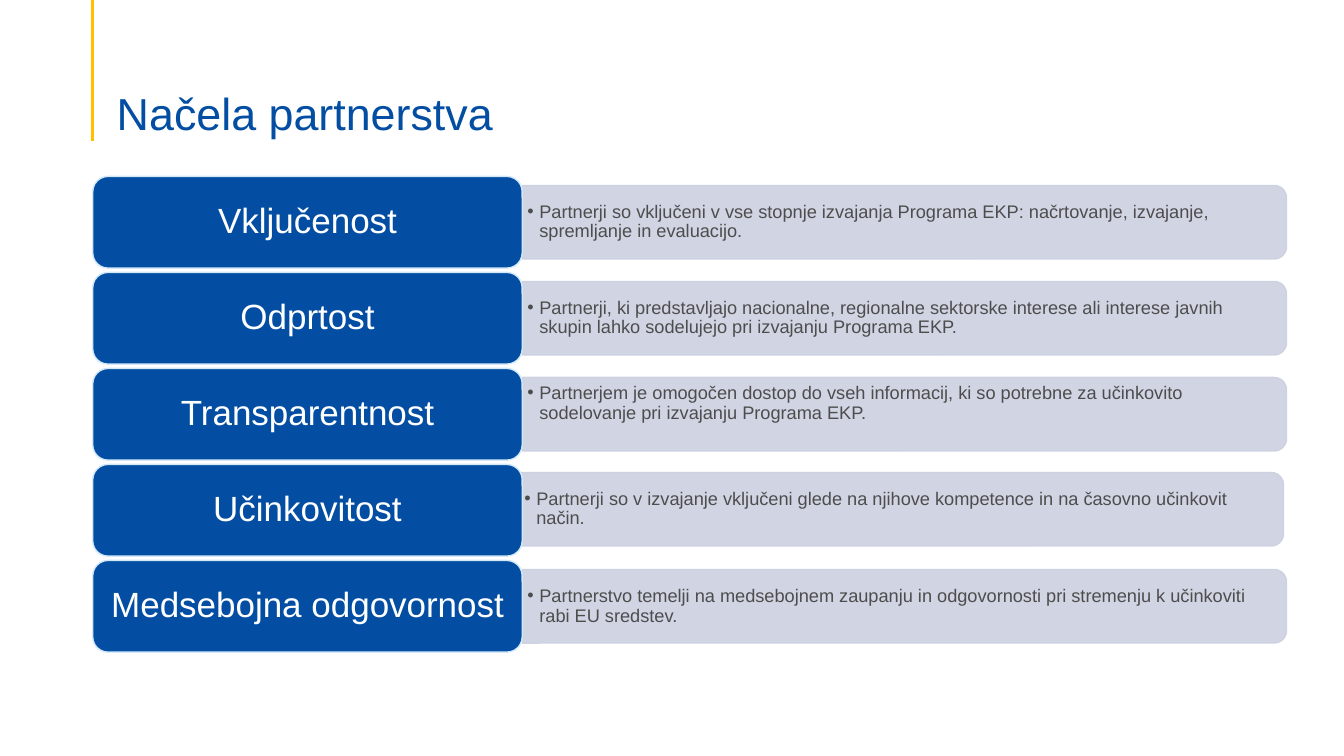
from dataclasses import dataclass

from lxml import etree
from pptx import Presentation
from pptx import util as u
from pptx.dml.color import RGBColor
from pptx.enum import shapes, text
from pptx.oxml.ns import qn

PX = 9144


@dataclass(frozen=True)
class Theme:
    """Colours, font and type sizes of the deck."""
    font: str = "Arial"
    blue: str = "034EA2"
    gold: str = "FFC000"
    panel: str = "CCD0E0"
    edge: str = "D3E8F9"
    body: str = "4D4D4D"
    white: str = "FFFFFF"
    title_size: int = 32
    label_size: int = 25
    body_size: int = 13


@dataclass(frozen=True)
class Principle:
    """One row: its label, explanation, panel shift in px and text anchor."""
    label: str
    detail: str
    shift: tuple = (0, 0)
    anchor: text.MSO_ANCHOR = text.MSO_ANCHOR.MIDDLE


THEME = Theme()

PRINCIPLES = [
    Principle("Vključenost",
              "Partnerji so vključeni v vse stopnje izvajanja Programa EKP: "
              "načrtovanje, izvajanje, spremljanje in evaluacijo."),
    Principle("Odprtost",
              "Partnerji, ki predstavljajo nacionalne, regionalne sektorske interese ali "
              "interese javnih skupin lahko sodelujejo pri izvajanju Programa EKP."),
    Principle("Transparentnost",
              "Partnerjem je omogočen dostop do vseh informacij, ki so potrebne za "
              "učinkovito sodelovanje pri izvajanju Programa EKP.",
              anchor=text.MSO_ANCHOR.TOP),
    Principle("Učinkovitost",
              "Partnerji so v izvajanje vključeni glede na njihove kompetence in na "
              "časovno učinkovit način.", shift=(-3, -1)),
    Principle("Medsebojna odgovornost",
              "Partnerstvo temelji na medsebojnem zaupanju in odgovornosti pri stremenju "
              "k učinkoviti rabi EU sredstev."),
]


def px(*lengths):
    """Turn px lengths into EMU."""
    return [u.Emu(round(length * PX)) for length in lengths]


def colour(value):
    """Return a colour object for a hex value."""
    return RGBColor.from_string(value)


def write(frame, words, size, ink, anchor, margins):
    """Write one paragraph in a text frame and return it."""
    frame.word_wrap = True
    frame.vertical_anchor = anchor
    (frame.margin_left, frame.margin_top,
     frame.margin_right, frame.margin_bottom) = px(*margins)
    para = frame.paragraphs[0]
    para.line_spacing = 0.9
    span = para.add_run()
    span.text = words
    span.font.name = THEME.font
    span.font.size = u.Pt(size)
    span.font.color.rgb = colour(ink)
    return para


def add_bullet(para):
    """Give a paragraph a hanging round bullet."""
    properties = para._p.get_or_add_pPr()
    indent, = px(12)
    properties.set("marL", str(indent))
    properties.set("indent", str(-indent))
    etree.SubElement(properties, qn("a:buFont")).set("typeface", THEME.font)
    etree.SubElement(properties, qn("a:buChar")).set("char", "•")


def add_block(page, kind, box, fill, edge):
    """Add a filled and outlined preset shape."""
    block = page.shapes.add_shape(kind, *px(*box))
    block.shadow.inherit = False
    block.fill.solid()
    block.fill.fore_color.rgb = colour(fill)
    block.line.color.rgb = colour(edge)
    block.line.width = u.Pt(1)
    return block


def add_panel(page, box):
    """Add a translucent panel rounded on its right side."""
    left, top, width, height = box
    inset = (width - height) / 2
    panel = add_block(page, shapes.MSO_SHAPE.ROUND_2_SAME_RECTANGLE,
                      (left + inset, top - inset, height, width), THEME.panel, THEME.panel)
    panel.rotation = 90
    for tint in panel._element.spPr.iter(qn("a:srgbClr")):
        etree.SubElement(tint, qn("a:alpha")).set("val", "90000")


def add_principle(page, principle, box):
    """Place a label and the panel that explains it in one row."""
    left, top, width, height = box
    label_width, panel_height, text_height = 426, 73, 66
    middle = top + height / 2 + principle.shift[1]
    panel_left = left + label_width + principle.shift[0]
    panel_width = width - label_width
    add_panel(page, (panel_left, middle - panel_height / 2, panel_width, panel_height))
    detail = page.shapes.add_textbox(
        *px(panel_left, middle - text_height / 2, panel_width - 4, text_height))
    para = write(detail.text_frame, principle.detail, THEME.body_size, THEME.body,
                 principle.anchor, (5, 3, 5, 3))
    add_bullet(para)
    label = add_block(page, shapes.MSO_SHAPE.ROUNDED_RECTANGLE,
                      (left, top, label_width, height), THEME.blue, THEME.edge)
    para = write(label.text_frame, principle.label, THEME.label_size, THEME.white,
                 text.MSO_ANCHOR.MIDDLE, (10, 5, 10, 5))
    para.alignment = text.PP_ALIGN.CENTER


def add_principles(page, box):
    """Spread the rows evenly over the box."""
    left, top, width, height = box
    row_height = 91
    pitch = (height - row_height) / (len(PRINCIPLES) - 1)
    for index, principle in enumerate(PRINCIPLES):
        add_principle(page, principle, (left, top + index * pitch, width, row_height))


def add_heading(page, box):
    """Place the gold rule and the title beside it."""
    left, top, width, height = box
    rule = page.shapes.add_connector(
        shapes.MSO_CONNECTOR.STRAIGHT, *px(left, top, left, top + height))
    rule.line.color.rgb = colour(THEME.gold)
    rule.line.width = u.Pt(2.25)
    etree.SubElement(rule._element.spPr, qn("a:effectLst"))
    title = page.shapes.add_textbox(*px(left + 14, top + 53, width - 14, height - 54))
    write(title.text_frame, "Načela partnerstva", THEME.title_size, THEME.blue,
          text.MSO_ANCHOR.BOTTOM, (10, 5, 10, 0))


def main():
    """Build the deck and save it."""
    deck = Presentation()
    deck.slide_width, deck.slide_height = px(1333, 750)
    page = deck.slides.add_slide(deck.slide_layouts[6])
    add_heading(page, (92, 0, 1164, 140))
    add_principles(page, (92, 175, 1184, 472))
    deck.save("out.pptx")


if __name__ == "__main__":
    main()
